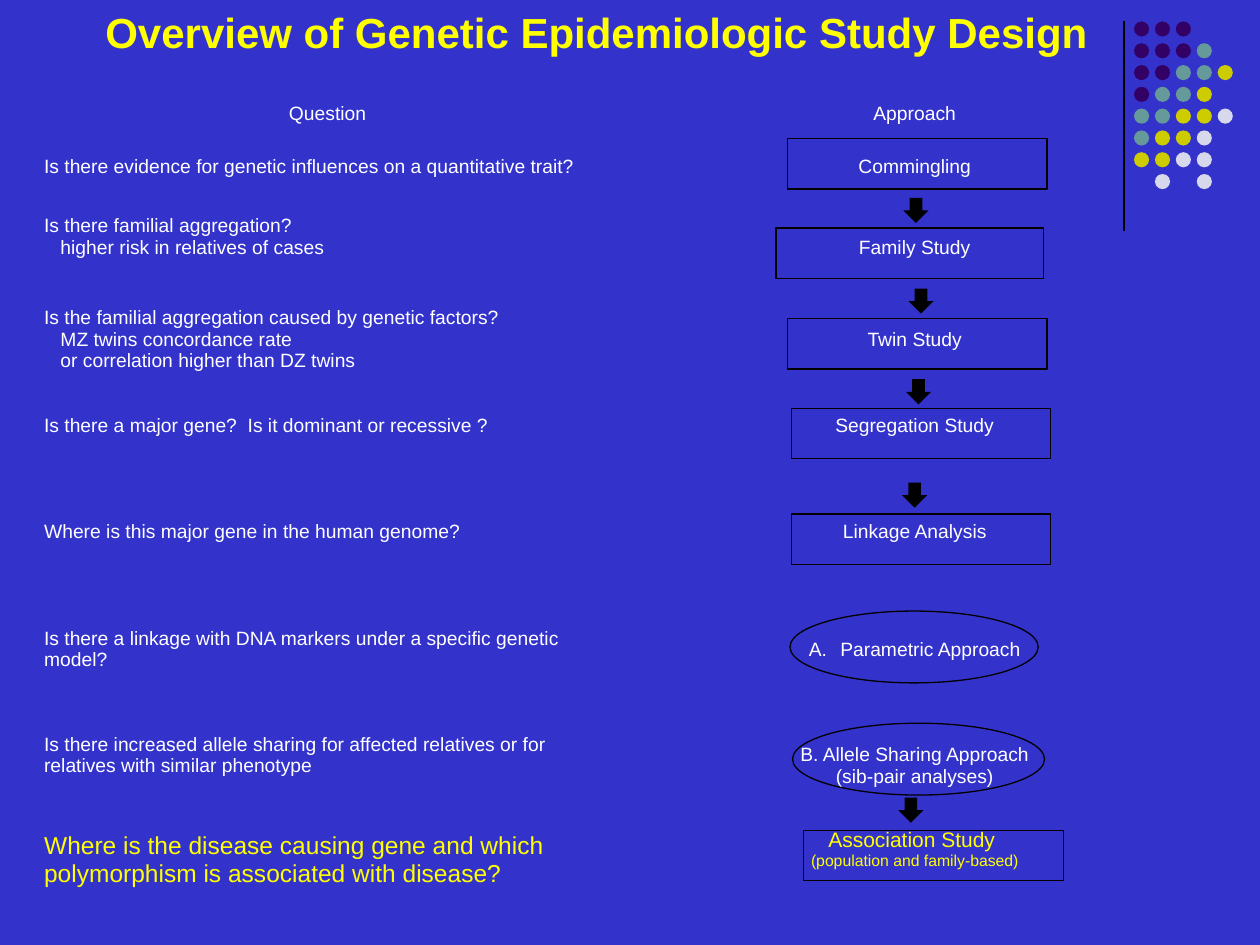
from lxml.etree import SubElement
from pptx import Presentation
from pptx.dml.color import RGBColor
from pptx.enum.shapes import MSO_CONNECTOR, MSO_SHAPE
from pptx.enum.text import MSO_ANCHOR, PP_ALIGN
from pptx.oxml.ns import qn
from pptx.util import Inches, Pt

COLORS = {"blue": "3333CC", "white": "FFFFFF", "yellow": "FFFF00", "black": "000000",
          "P": "330066", "T": "669999", "Y": "CCCC00", "G": "D8D8EC"}
NO_STYLE = "{2D5ABB26-0587-4C30-8999-92F81FD0307C}"
LINE = 1.7  # height of one text line, in grid units

# Dot pattern: one letter per dot, a blank where there is none
DOTS = ["PPP", "PPPT", "PPTTY", "PTTY", "TTYYG", "TYYG", "YYGG", " G G"]

# Table rows: height, question lines, approach lines
ROWS = [
    (1.8, [], []),
    (3.2, ["Question"], ["Approach"]),
    (5.3, ["Is there evidence for genetic influences on a quantitative trait?"], ["Commingling"]),
    (7.5, ["Is there familial aggregation?", "higher risk in relatives of cases"], ["Family Study"]),
    (7.1, ["Is the familial aggregation caused by genetic factors?", "MZ twins concordance rate",
           "or correlation higher than DZ twins"], ["Twin Study"]),
    (6.6, ["Is there a major gene?  Is it dominant or recessive ?"], ["Segregation Study"]),
    (10.3, ["Where is this major gene in the human genome?"], ["Linkage Analysis"]),
    (8.3, ["Is there a linkage with DNA markers under a specific genetic model?"],
     ["Parametric Approach"]),
    (8.5, ["Is there increased allele sharing for affected relatives or for "
           "relatives with similar phenotype"],
     ["B. Allele Sharing Approach", "(sib-pair analyses)"]),
    (8.1, ["Where is the disease causing gene and which polymorphism is associated with disease?"],
     ["Association Study ", "(population and family-based)"]),
]
COLUMNS = [45.6, 47.6, 0.9]
HEADER, FAMILY, PARAMETRIC, SHARING, ASSOCIATION = 1, 3, 7, 8, 9

# Flow chart: left, top (and width) in grid units
BOXES = [(62.5, 11, 20.6), (61.6, 18.1, 21.2), (62.5, 25.3, 20.6),
         (62.8, 32.4, 20.6), (62.8, 40.8, 20.6), (63.8, 65.9, 20.6)]
OVALS = [(62.7, 48.5, 19.7), (62.9, 57.4, 20)]
ARROWS = [(71.7, 15.7), (72.1, 22.9), (71.9, 30.1), (71.6, 38.3), (71.3, 63.3)]


def grid(*units):
    """Turn units of a 100 by 75 grid into slide lengths."""
    return [Inches(unit / 10) for unit in units]


def color(name):
    return RGBColor.from_string(COLORS[name])


def set_values(target, values):
    for name, value in values.items():
        setattr(target, name, value)


def write(para, text, size=11, ink="white", bold=False):
    span = para.add_run()
    span.text = text
    set_values(span.font, {"name": "Arial", "size": Pt(size), "bold": bold})
    span.font.color.rgb = color(ink)


def indent(para, left, hanging=0):
    properties = para._p.get_or_add_pPr()
    properties.set("marL", str(Inches(left)))
    properties.set("indent", str(Inches(-hanging)))
    return properties


def add_figure(page, kind, place, fill=None, line=None):
    shape = page.shapes.add_shape(kind, *grid(*place))
    shape.shadow.inherit = False
    if fill:
        shape.fill.solid()
        shape.fill.fore_color.rgb = color(fill)
    else:
        shape.fill.background()
    if line:
        shape.line.color.rgb = color(line)
        shape.line.width = Pt(0.75)
    else:
        shape.line.fill.background()


def add_decoration(page):
    rule = page.shapes.add_connector(MSO_CONNECTOR.STRAIGHT, *grid(89.2, 1.7, 89.2, 18.3))
    rule.line.color.rgb = color("black")
    rule.line.width = Pt(0.75)
    SubElement(rule._element.spPr, qn("a:effectLst"))
    for row, pattern in enumerate(DOTS):
        for column, letter in enumerate(pattern):
            if letter != " ":
                place = (90 + 1.66 * column, 1.7 + 1.73 * row, 1.2, 1.2)
                add_figure(page, MSO_SHAPE.OVAL, place, fill=letter)


def fill_cell(cell, lines, row, column):
    cell.fill.background()
    set_values(cell, {"margin_left": Inches(0.03), "margin_right": Inches(0.03),
                      "margin_top": 0, "margin_bottom": 0,
                      "vertical_anchor": MSO_ANCHOR.MIDDLE})
    frame = cell.text_frame
    if not lines:
        SubElement(frame.paragraphs[0]._p, qn("a:endParaRPr"), sz="600")
    for number, text in enumerate(lines):
        para = frame.add_paragraph() if number else frame.paragraphs[0]
        if row == HEADER or column == 1:
            para.alignment = PP_ALIGN.CENTER
        elif number:
            indent(para, 0.13)
        sizes = (14,) if column == 0 else (12, 9)
        if row == ASSOCIATION:
            write(para, text, sizes[number], "yellow")
        else:
            write(para, text)


def add_study_table(page):
    heights = [row[0] for row in ROWS]
    frame = page.shapes.add_table(len(ROWS), len(COLUMNS),
                                  *grid(3.2, 5.6, sum(COLUMNS), sum(heights)))
    table = frame.table
    set_values(table, {"first_row": False, "horz_banding": False})
    table._tbl.tblPr.find(qn("a:tableStyleId")).text = NO_STYLE
    for column, width in zip(table.columns, grid(*COLUMNS)):
        column.width = width
    for row, (height, question, approach) in enumerate(ROWS):
        table.rows[row].height = grid(height)[0]
        for column, lines in enumerate((question, approach, [])):
            fill_cell(table.cell(row, column), lines, row, column)
    table.cell(0, 0).merge(table.cell(0, 2))

    # Cells whose text sits off the middle by half a line
    table.cell(FAMILY, 0).margin_bottom = grid(LINE)[0]
    table.cell(SHARING, 1).margin_top = grid(LINE)[0]
    table.cell(ASSOCIATION, 1).margin_bottom = grid(LINE)[0]

    # Lettered item
    properties = indent(table.cell(PARAMETRIC, 1).text_frame.paragraphs[0], 0.25, 0.25)
    SubElement(properties, qn("a:buAutoNum"), type="alphaUcPeriod")


def set_title(page):
    title = page.shapes.title
    title.left, title.top, title.width, title.height = grid(-1.5, 0, 97.7, 9.1)
    set_values(title.text_frame, {"word_wrap": True, "vertical_anchor": MSO_ANCHOR.TOP})
    para = title.text_frame.paragraphs[0]
    para.alignment = PP_ALIGN.CENTER
    write(para, "Overview of Genetic Epidemiologic Study Design", 24, "yellow", True)


def add_flow(page):
    for left, top in ARROWS:
        add_figure(page, MSO_SHAPE.DOWN_ARROW, (left, top, 2, 2), fill="black")
    for kind, height, places in ((MSO_SHAPE.RECTANGLE, 4, BOXES), (MSO_SHAPE.OVAL, 5.7, OVALS)):
        for place in places:
            add_figure(page, kind, (*place, height), line="black")


def main():
    deck = Presentation()
    deck.slide_width, deck.slide_height = grid(100, 75)
    page = deck.slides.add_slide(deck.slide_layouts[5])
    page.background.fill.solid()
    page.background.fill.fore_color.rgb = color("blue")
    add_decoration(page)
    add_study_table(page)
    set_title(page)
    add_flow(page)
    deck.save("out.pptx")


if __name__ == "__main__":
    main()
